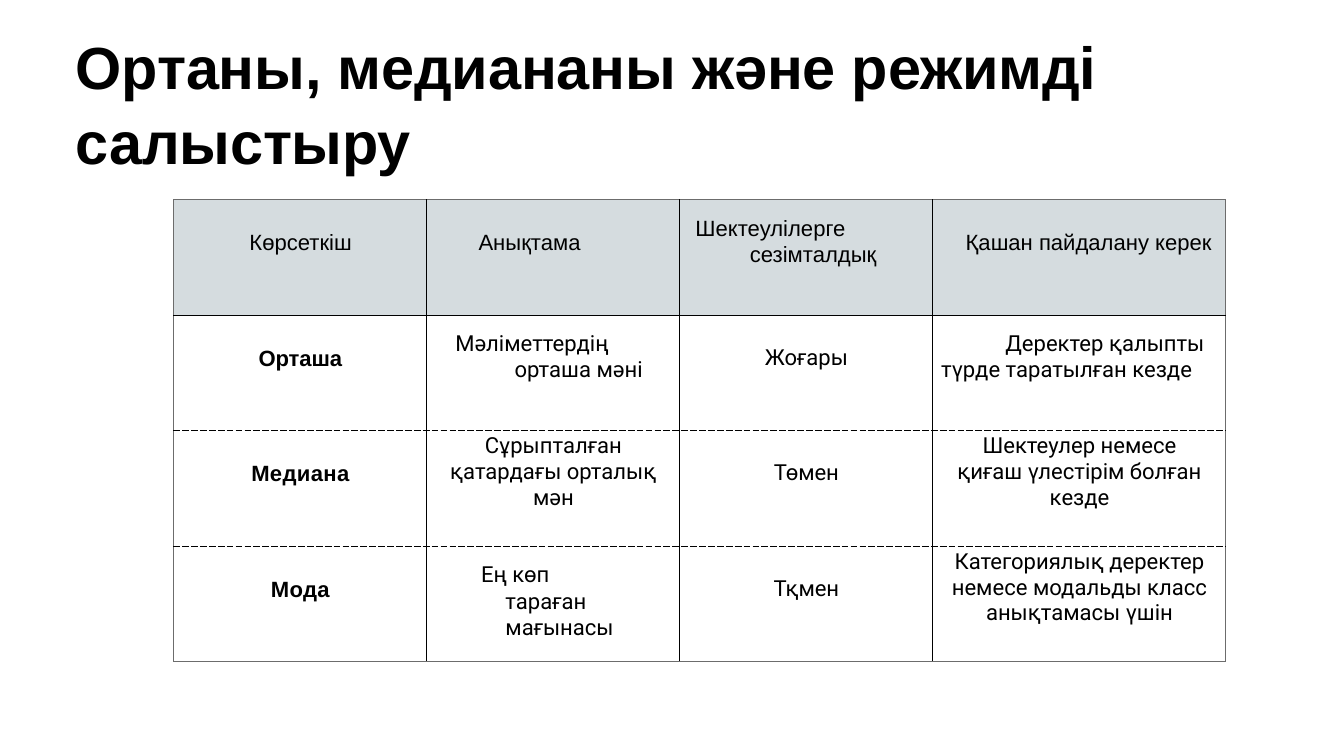
from dataclasses import dataclass

from lxml import etree
from pptx import Presentation
from pptx.dml.color import RGBColor
from pptx.enum.text import MSO_ANCHOR, MSO_AUTO_SIZE, PP_ALIGN
from pptx.oxml.ns import qn
from pptx.util import Emu, Inches, Pt

BLACK = RGBColor(0x00, 0x00, 0x00)
GREY = RGBColor(0x6C, 0x6C, 0x6C)
WHITE = RGBColor(0xFF, 0xFF, 0xFF)
HEADER_FILL = RGBColor(0xD5, 0xDC, 0xDF)
LEFT, CENTER = PP_ALIGN.LEFT, PP_ALIGN.CENTER
TOP = MSO_ANCHOR.TOP
NO_AUTOFIT = MSO_AUTO_SIZE.NONE

SLIDE_WIDTH, SLIDE_HEIGHT = 21.99, 12.37
TITLE_BOX = (1.24, 0.43, 19.83, 2.37)
TABLE_BOX = (2.84, 3.27, 17.21, 7.56)
COLUMN_SHARES = (4.14, 4.14, 4.14, 4.79)
TITLE_LAYOUT = 5


@dataclass
class Entry:
    """Text of one cell; lengths in inches."""
    text: str
    top: float
    left: float = 0.01
    indent: float = 0
    right: float = 0
    align: PP_ALIGN = CENTER
    font: str = "Roboto"
    bold: bool = False
    tracking: float = 0
    line_spacing: float = 1


def header(text, top=0.5, left=0.02, **options):
    return Entry(text, top, left, font="Arial", **options)


def measure(text, tracking):
    return Entry(text, 0.51, font="Arial", bold=True, tracking=tracking)


ROWS = [
    [header("Көрсеткіш"),
     header("Анықтама", left=0.85, align=LEFT),
     header("Шектеулілерге сезімталдық", 0.26, 1.15, indent=-0.89,
            align=LEFT, line_spacing=1.04),
     header("Қашан пайдалану керек", left=0.54, align=LEFT)],
    [measure("Орташа", -0.1),
     Entry("Мәліметтердің орташа мәні", 0.26, 1.44, -0.97, align=LEFT),
     Entry("Жоғары", 0.48),
     Entry("Деректер қалыпты түрде таратылған кезде", 0.26, 0.14, 1.05, align=LEFT)],
    [measure("Медиана", 0.4),
     Entry("Сұрыпталған қатардағы орталық мән", 0.04, 0.17, right=0.16),
     Entry("Төмен", 0.48, tracking=-0.1),
     Entry("Шектеулер немесе қиғаш үлестірім болған кезде", 0.04, 0.29, right=0.27)],
    [measure("Мода", 0.4),
     Entry("Ең көп тараған мағынасы", 0.26, 1.29, -0.4, right=0.9,
           align=LEFT, line_spacing=1.01),
     Entry("Тқмен", 0.48, tracking=-0.1),
     Entry("Категориялық деректер немесе модальды класс анықтамасы үшін",
           0.04, 0.27, right=0.25)],
]


def add_run(paragraph, text, font, size, bold, tracking):
    run = paragraph.add_run()
    run.text = text
    run.font.name = font
    run.font.size = Pt(size)
    run.font.bold = bold
    run.font.color.rgb = BLACK
    run.font._element.set("spc", str(round(tracking * 100)))


def add_border(cell, side, color, width=1, dash="solid"):
    line = etree.SubElement(cell._tc.get_or_add_tcPr(), qn(f"a:ln{side}"), w=str(Pt(width)))
    fill = etree.SubElement(line, qn("a:solidFill"))
    etree.SubElement(fill, qn("a:srgbClr"), val=str(color))
    etree.SubElement(line, qn("a:prstDash"), val=dash)


def draw_borders(cell, row, column):
    """Grey frame, dashed rules in the body, heavy rule after its first column."""
    last_row, last_column = len(ROWS) - 1, len(COLUMN_SHARES) - 1
    for side, edge in (("L", column), ("R", column + 1)):
        outer = edge in (0, last_column + 1)
        heavy = edge == 1 and row > 0
        add_border(cell, side, GREY if outer else BLACK, 2.25 if heavy else 1)
    for side, edge in (("T", row), ("B", row + 1)):
        outer = edge in (0, last_row + 1)
        dashed = 1 < edge <= last_row
        add_border(cell, side, GREY if outer else BLACK,
                   dash="sysDash" if dashed else "solid")


def fill_cell(cell, entry):
    cell.margin_left = cell.margin_bottom = 0
    cell.margin_top = Inches(entry.top)
    cell.margin_right = Inches(entry.right)
    cell.vertical_anchor = TOP
    paragraph = cell.text_frame.paragraphs[0]
    paragraph.alignment = entry.align
    paragraph.line_spacing = entry.line_spacing
    properties = paragraph._p.get_or_add_pPr()
    properties.set("marL", str(Inches(entry.left)))
    properties.set("indent", str(Inches(entry.indent)))
    add_run(paragraph, entry.text, entry.font, 26, entry.bold, entry.tracking)


def place_title(slide, box):
    title = slide.shapes.title
    title.left, title.top, title.width, title.height = map(Inches, box)
    frame = title.text_frame
    frame.margin_left = frame.margin_top = frame.margin_right = frame.margin_bottom = 0
    frame.word_wrap = True
    frame.auto_size = NO_AUTOFIT
    frame.vertical_anchor = TOP
    paragraph = frame.paragraphs[0]
    paragraph.alignment = LEFT
    paragraph.line_spacing = 1.05
    paragraph.space_before = Pt(0.9)
    add_run(paragraph, "Ортаны, медиананы және режимді салыстыру", "Arial", 70, True, -0.2)


def add_comparison_table(slide, box):
    left, top, width, height = map(Inches, box)
    table = slide.shapes.add_table(
        len(ROWS), len(COLUMN_SHARES), left, top, width, height).table
    table.first_row = table.horz_banding = False
    for column, share in zip(table.columns, COLUMN_SHARES):
        column.width = Emu(int(width * share / sum(COLUMN_SHARES)))
    for row_index, entries in enumerate(ROWS):
        table.rows[row_index].height = Emu(height // len(ROWS))
        for column_index, entry in enumerate(entries):
            cell = table.cell(row_index, column_index)
            fill_cell(cell, entry)
            # Borders come before the fill in the cell properties
            draw_borders(cell, row_index, column_index)
            cell.fill.solid()
            cell.fill.fore_color.rgb = WHITE if row_index else HEADER_FILL


def main():
    presentation = Presentation()
    presentation.slide_width = Inches(SLIDE_WIDTH)
    presentation.slide_height = Inches(SLIDE_HEIGHT)
    slide = presentation.slides.add_slide(presentation.slide_layouts[TITLE_LAYOUT])
    place_title(slide, TITLE_BOX)
    add_comparison_table(slide, TABLE_BOX)
    presentation.save("out.pptx")


if __name__ == "__main__":
    main()
